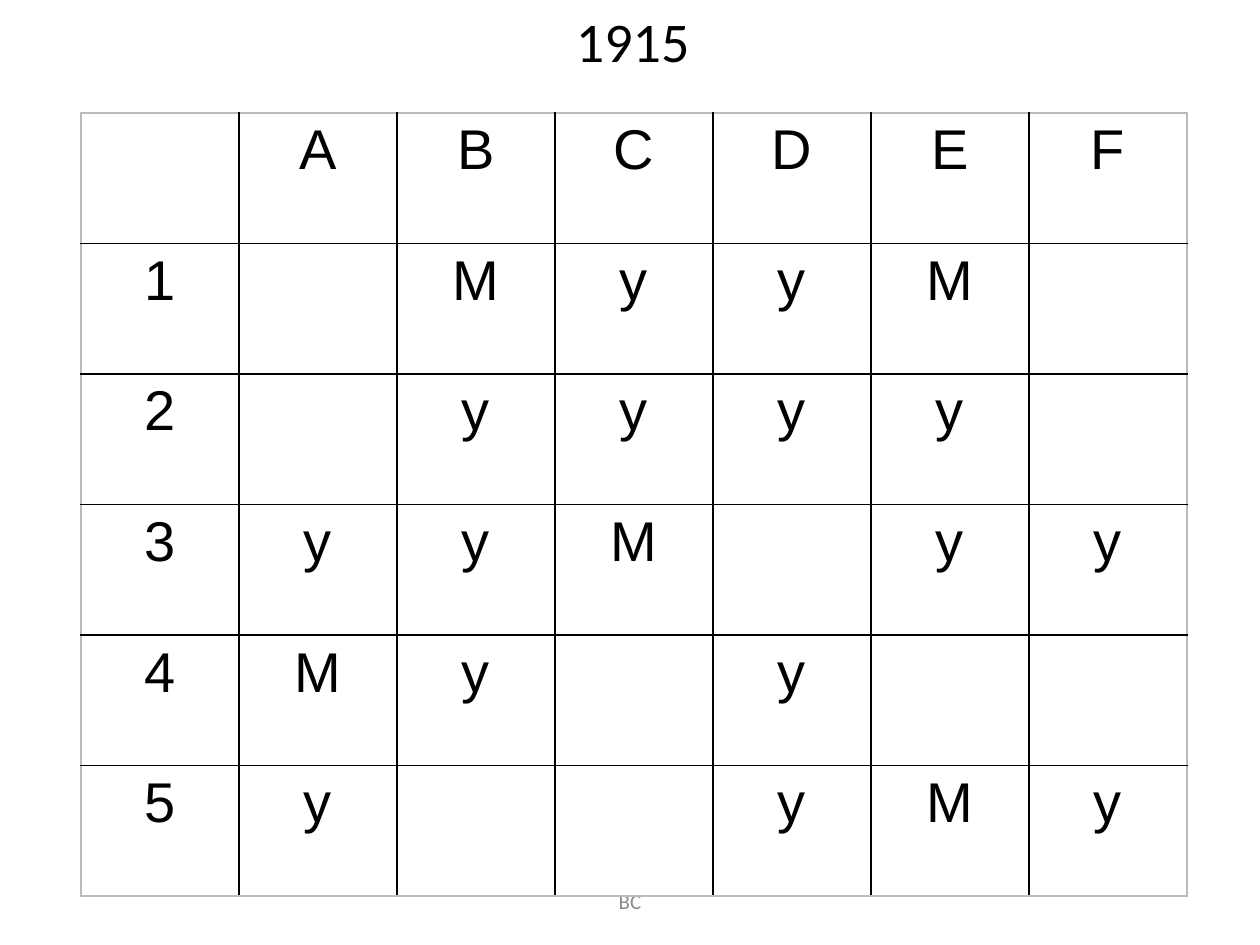
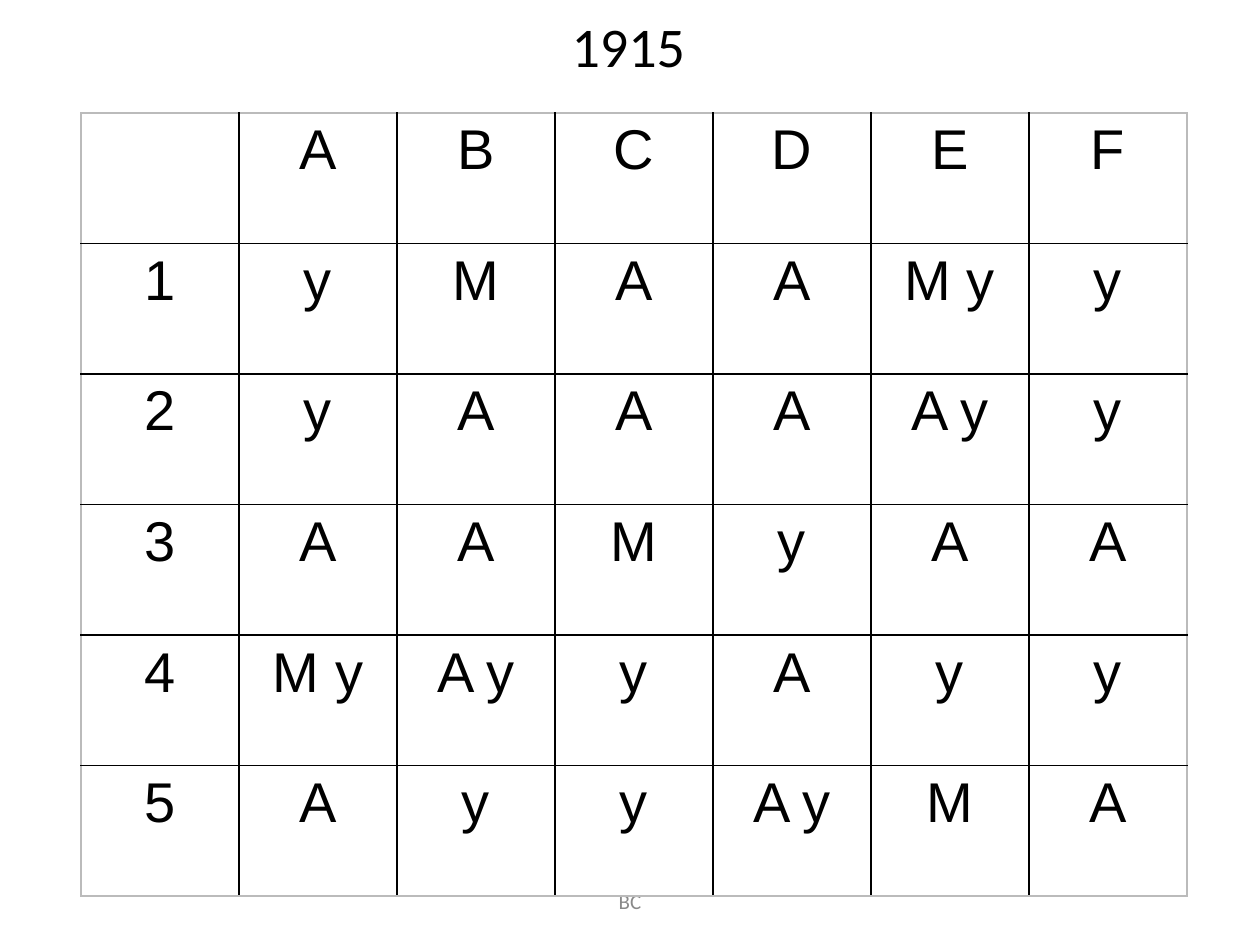
from lxml.etree import SubElement
from pptx import Presentation
from pptx.dml.color import RGBColor
from pptx.enum.text import MSO_ANCHOR, MSO_AUTO_SIZE, PP_ALIGN
from pptx.oxml.ns import qn
from pptx.util import Pt

BLACK = RGBColor(0x00, 0x00, 0x00)
GREY = RGBColor(0x89, 0x89, 0x89)
EDGE = RGBColor(0xBB, 0xBB, 0xBB)
WHITE = RGBColor(0xFF, 0xFF, 0xFF)

TITLE, FOOTER = "1915", "BC"
COLUMNS = ["", "A", "B", "C", "D", "E", "F"]
SLIDES = [
    {"title_at": (322, 0), "rows": [
        ["", "M", "y", "y", "M", ""],
        ["", "y", "y", "y", "y", ""],
        ["y", "y", "M", "", "y", "y"],
        ["M", "y", "", "y", "", ""],
        ["y", "", "", "y", "M", "y"],
    ]},
    {"title_at": (319.5, 2.7), "rows": [
        ["y", "M", "A", "A", "M y", "y"],
        ["y", "A", "A", "A", "A y", "y"],
        ["A", "A", "M", "y", "A", "A"],
        ["M y", "A y", "y", "A", "y", "y"],
        ["A", "y", "y", "A y", "M", "A"],
    ]},
]
TABLE_LEFT, TABLE_TOP = 46.3, 64.5
COLUMN_WIDTH, ROW_HEIGHT = 90.3, 74.6


def write(frame, text, *, font, size=32, color=BLACK, anchor=MSO_ANCHOR.TOP):
    frame.word_wrap = True
    frame.vertical_anchor = anchor
    para = frame.paragraphs[0]
    para.alignment = PP_ALIGN.CENTER
    span = para.add_run()
    span.text = text
    span.font.name = font
    span.font.size = Pt(size)
    span.font.color.rgb = color


def set_borders(cell, sides):
    properties = cell._tc.get_or_add_tcPr()
    for index, (side, color) in enumerate(sides.items()):
        line = properties.makeelement(qn(f"a:{side}"), {"w": str(Pt(1))})
        fill = SubElement(line, qn("a:solidFill"))
        SubElement(fill, qn("a:srgbClr"), val=str(color))
        properties.insert(index, line)


def add_grid(page, rows):
    height, width = len(rows), len(rows[0])
    frame = page.shapes.add_table(height, width, Pt(TABLE_LEFT), Pt(TABLE_TOP),
                                  Pt(COLUMN_WIDTH * width), Pt(ROW_HEIGHT * height))
    table = frame.table
    table.first_row = table.horz_banding = False
    for column in table.columns:
        column.width = Pt(COLUMN_WIDTH)
    for y, row in enumerate(rows):
        table.rows[y].height = Pt(ROW_HEIGHT)
        for x, text in enumerate(row):
            cell = table.cell(y, x)
            cell.fill.solid()
            cell.fill.fore_color.rgb = WHITE
            outer = {"lnL": x == 0, "lnR": x == width - 1,
                     "lnT": y == 0, "lnB": y == height - 1}
            set_borders(cell, {side: EDGE if edge else BLACK
                               for side, edge in outer.items()})
            if text:
                write(cell.text_frame, text, font="Arial")


def add_page(deck, title_at, rows):
    page = deck.slides.add_slide(deck.slide_layouts[5])
    box = page.shapes.add_textbox(Pt(246), Pt(500.4), Pt(228), Pt(28.8))
    write(box.text_frame, FOOTER, font="Calibri", size=12, color=GREY,
          anchor=MSO_ANCHOR.MIDDLE)
    numbered = [[str(number), *row] for number, row in enumerate(rows, 1)]
    add_grid(page, [COLUMNS, *numbered])
    title = page.shapes.title
    title.left, title.top = (Pt(value) for value in title_at)
    title.width, title.height = Pt(79.2), Pt(45.4)
    frame = title.text_frame
    frame.margin_left = frame.margin_right = 0
    frame.auto_size = MSO_AUTO_SIZE.NONE
    write(frame, TITLE, font="Calibri")
    page.shapes._spTree.append(title._element)


def main():
    """Build the two 1915 grid slides."""
    deck = Presentation()
    deck.slide_width, deck.slide_height = Pt(720), Pt(540)
    for content in SLIDES:
        add_page(deck, **content)
    deck.save("out.pptx")


if __name__ == "__main__":
    main()
